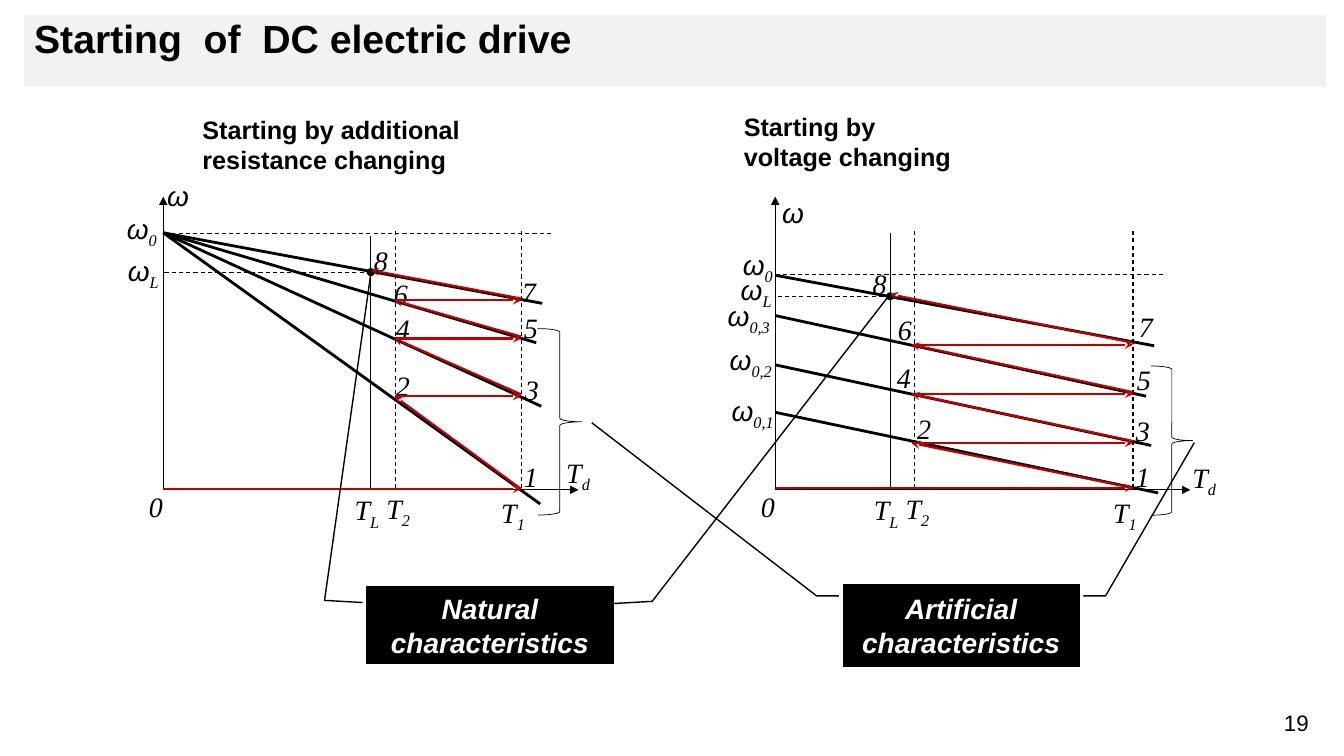
from dataclasses import dataclass

from pptx import Presentation
from pptx.dml.color import RGBColor
from pptx.enum.dml import MSO_LINE
from pptx.enum.shapes import MSO_CONNECTOR, MSO_SHAPE
from pptx.enum.text import MSO_ANCHOR, PP_ALIGN
from pptx.oxml.ns import qn
from pptx.util import Pt
from lxml import etree

DASH = MSO_LINE.DASH
STRAIGHT = MSO_CONNECTOR.STRAIGHT
RECTANGLE, OVAL = MSO_SHAPE.RECTANGLE, MSO_SHAPE.OVAL
BRACE, CALLOUT = MSO_SHAPE.RIGHT_BRACE, MSO_SHAPE.LINE_CALLOUT_2_NO_BORDER
TOP, MIDDLE = MSO_ANCHOR.TOP, MSO_ANCHOR.MIDDLE
LEFT, CENTER = PP_ALIGN.LEFT, PP_ALIGN.CENTER

COLORS = {"ink": "000000", "path": "C00000", "banner": "F2F2F2", "white": "FFFFFF"}
SANS, SERIF = "Arial", "Times New Roman"
AXIS_Y, AXIS_TOP, AXIS_LENGTH = 349.9, 140.4, 296.6
DASHED_LENGTH = 277
SLOPE_GAP = 1.4
DOT = 5


@dataclass
class Label:
    text: str
    x: float
    y: float
    sub: str = ""
    width: float = 54


@dataclass
class Graph:
    origin: float
    load_torque: float
    low_torque: float
    switch: float
    high_torque: float
    no_load_speed: float
    load_speed: float
    top: float
    characteristics: list[tuple[float, float, float]]
    levels: list[float]
    final_level: float
    brace: tuple[float, float, float, float]
    labels: list[Label]


@dataclass
class Callout:
    text: str
    box: tuple[float, float, float, float]
    leader: tuple[float, ...]
    mirror_box: tuple[float, float, float, float]
    mirror_leader: tuple[float, ...]


def number_labels(spots: list[tuple[float, float]]) -> list[Label]:
    return [Label(str(n), x, y, width=27.4 if n == 1 else 40.3)
            for n, (x, y) in enumerate(spots, 1)]


GRAPHS = [
    Graph(116.6, 148.3, 165.6, 165.2, 255.6, 167, 194.4, 168.5,
          [(166.3, 270.7, 216.7), (166.3, 266.4, 244.8),
           (166.3, 270, 290.2), (166.3, 269.3, 360)],
          [349.2, 283, 241.8, 214.6], 193, (267.8, 234.7, 31, 133.2),
          [Label("ω", -4.3, 120.2), Label("ω", -33.1, 143.3, "0"),
           Label("ω", -32.4, 173.5, "L"), Label("T", 280.8, 317.5, "d", 40.3)]
          + number_labels([(250.6, 321.1), (159.1, 256.3), (251.3, 259.2), (159.1, 215.3),
                           (250.6, 214.6), (157.7, 190.1), (249.1, 188.6), (143.3, 167)])),
    Graph(553.7, 82.1, 99.4, 97.4, 255.6, 195.8, 211.7, 166.3,
          [(196.6, 270.7, 247), (225.4, 265, 283),
           (260.6, 268.6, 318.2), (294.5, 273.6, 352.1)],
          [348.5, 316.5, 281.5, 246.2], 210.2, (268.6, 261.4, 29.5, 106.6),
          [Label("ω", -2.2, 132.5), Label("ω", -30.2, 169.2, "0"),
           Label("ω", -31.7, 187.2, "L"), Label("ω", -38.2, 273.6, "0,1"),
           Label("ω", -39.6, 236.9, "0,2"), Label("ω", -41, 205.9, "0,3"),
           Label("T", 290.9, 321.1, "d", 40.3)]
          + number_labels([(250.6, 321.1), (94.3, 286.6), (250.6, 288), (79.9, 250.6),
                           (251.3, 252), (80.6, 216), (252.7, 213.8), (62.6, 182.9)])),
]

CALLOUTS = [
    Callout("Artificial characteristics",
            (601.9, 416.9, 169.2, 59.8), (0.147, -0.016, 0.147, -0.11, -1.921, -1.059),
            (601.9, 416.9, 169.2, 59.8), (0.147, -0.016, 0.147, -0.11, -1.684, -0.485)),
    Callout("Natural characteristics",
            (261.4, 418.3, 177.1, 56.2), (0.215, -0.013, 0.188, -0.167, -3.947, 0.019),
            (259.2, 419, 177.1, 56.2), (0.215, -0.013, 0.188, -0.167, -3.73, -1.13)),
]


def rgb(name: str) -> RGBColor:
    return RGBColor.from_string(COLORS[name])


def write(shape, text, *, size=20, font=SANS, color="ink", bold=False, italic=False,
          sub="", align=LEFT, anchor=TOP, spacing=None, after=None) -> None:
    frame = shape.text_frame
    frame.word_wrap = True
    frame.vertical_anchor = anchor
    paragraph = frame.paragraphs[0]
    paragraph.alignment = align
    if spacing:
        paragraph.line_spacing = spacing
    if after:
        paragraph.space_after = Pt(after)
    for part, face in ((text, font), (sub, SERIF)):
        if not part:
            continue
        run = paragraph.add_run()
        run.text = part
        run.font.name, run.font.size = face, Pt(size)
        run.font.bold, run.font.italic = bold, italic
        run.font.color.rgb = rgb(color)
        if part is sub:
            run.font._element.set("baseline", "-25000")


def text_box(shapes, box: tuple[float, ...], text: str, **style) -> None:
    write(shapes.add_textbox(*map(Pt, box)), text, **style)


def draw_shape(shapes, kind, box: tuple[float, ...], fill=None, line=None, width=1.0):
    shape = shapes.add_shape(kind, *map(Pt, box))
    shape.shadow.inherit = False
    if fill:
        shape.fill.solid()
        shape.fill.fore_color.rgb = rgb(fill)
    else:
        shape.fill.background()
    if line:
        shape.line.color.rgb = rgb(line)
        shape.line.width = Pt(width)
    else:
        shape.line.fill.background()
    return shape


def draw_line(shapes, x1, y1, x2, y2, color="ink", width=0.75, dash=None, head=None) -> None:
    connector = shapes.add_connector(STRAIGHT, Pt(x1), Pt(y1), Pt(x2), Pt(y2))
    connector.line.color.rgb = rgb(color)
    connector.line.width = Pt(width)
    if dash:
        connector.line.dash_style = dash
    if head:
        etree.SubElement(connector.line._get_or_add_ln(), qn("a:tailEnd"), type=head)
    etree.SubElement(connector._element.spPr, qn("a:effectLst"))


def draw_graph(shapes, graph: Graph) -> None:
    def line(x1: float, y1: float, x2: float, y2: float, **style) -> None:
        draw_line(shapes, graph.origin + x1, y1, graph.origin + x2, y2, **style)

    axis_labels = [Label("0", -17.3, 342.7, width=27.4),
                   Label("T", graph.load_torque - 18.7, 344.5, "L"),
                   Label("T", graph.low_torque - 13.3, 343.4, "2"),
                   Label("T", graph.high_torque - 21.3, 346, "1")]
    for label in graph.labels + axis_labels:
        text_box(shapes, (graph.origin + label.x, label.y, label.width, 41.8), label.text,
                 sub=label.sub, font=SANS if label.text == "ω" else SERIF,
                 italic=True, spacing=1.15, after=10)

    line(0, AXIS_Y, 0, AXIS_TOP, head="triangle")
    line(0, AXIS_Y, AXIS_LENGTH, AXIS_Y, head="triangle")
    line(graph.load_torque, graph.top, graph.load_torque, graph.top + 181.4)
    for torque in (graph.low_torque, graph.high_torque):
        line(torque, 348.6, torque, 164.3, dash=DASH)
    line(DASHED_LENGTH, graph.no_load_speed, 0, graph.no_load_speed, dash=DASH)
    line(graph.load_torque, graph.load_speed, 0, graph.load_speed, dash=DASH)
    for start_y, end_x, end_y in graph.characteristics:
        line(0, start_y, end_x, end_y, width=2)
    draw_shape(shapes, OVAL, (graph.origin + graph.load_torque - DOT / 2,
                              graph.load_speed - DOT / 2, DOT, DOT), "ink", "ink", 0.75)

    arrow = {"color": "path", "width": 1.5, "head": "stealth"}
    targets = [(graph.switch, level) for level in graph.levels[1:]]
    targets.append((graph.load_torque, graph.final_level))
    start_x = 0
    for step, (level, target) in enumerate(zip(graph.levels, targets)):
        line(start_x, level, graph.high_torque, level, **arrow)
        line(graph.high_torque, level - (SLOPE_GAP if step else 0), *target, **arrow)
        start_x = graph.switch

    x, y, width, height = graph.brace
    draw_shape(shapes, BRACE, (graph.origin + x, y, width, height), line="ink", width=0.5)


def draw_callout(shapes, callout: Callout) -> None:
    pair = shapes.add_group_shape().shapes
    labelled = draw_shape(pair, CALLOUT, callout.box, "ink", "ink")
    write(labelled, callout.text, color="white", bold=True, italic=True,
          align=CENTER, anchor=MIDDLE)
    mirrored = draw_shape(pair, CALLOUT, callout.mirror_box, line="ink")
    mirrored._element.spPr.xfrm.set("flipH", "1")
    for shape, leader in ((labelled, callout.leader), (mirrored, callout.mirror_leader)):
        for index, value in enumerate(leader):
            shape.adjustments[index] = value


def main() -> None:
    deck = Presentation()
    deck.slide_width, deck.slide_height = Pt(960), Pt(540)
    shapes = deck.slides.add_slide(deck.slide_layouts[6]).shapes

    banner = draw_shape(shapes, RECTANGLE, (17.3, 10.8, 930.2, 51.1), "banner")
    write(banner, "Starting  of  DC electric drive", size=28, bold=True, spacing=0.9)
    text_box(shapes, (137.5, 77.8, 243.4, 51.1),
             "Starting by additional resistance changing", size=18, bold=True)
    text_box(shapes, (524.2, 75.6, 172.1, 51.1),
             "Starting by voltage changing", size=18, bold=True)
    for graph in GRAPHS:
        draw_graph(shapes, graph)
    for callout in CALLOUTS:
        draw_callout(shapes, callout)
    text_box(shapes, (902.9, 503.3, 46.1, 26.6), "19", size=16, align=CENTER)
    deck.save("out.pptx")


if __name__ == "__main__":
    main()
